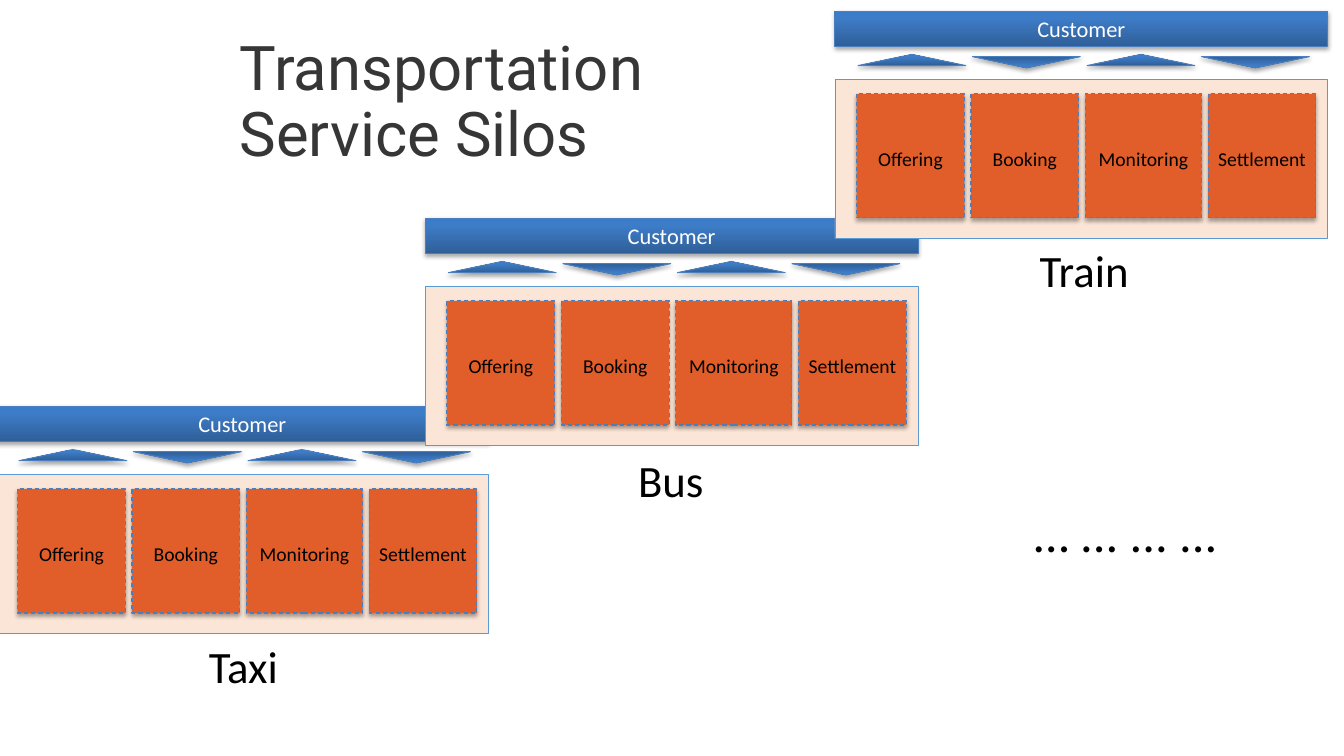
from copy import deepcopy
from dataclasses import dataclass

from lxml import etree
from pptx import Presentation
from pptx import util as u
from pptx.dml.color import RGBColor
from pptx.enum import dml, shapes, text
from pptx.oxml.ns import qn


@dataclass(frozen=True)
class Theme:
    """Colours, fonts and type sizes of the slide."""
    heading: str = "353635"
    ink: str = "000000"
    bar_ink: str = "FFFFFF"
    pane: str = "FBE5D6"
    pane_edge: str = "5B9BD5"
    stage: str = "E15D29"
    edge: str = "4B7EBC"
    gradient: tuple = ((0, "2F5F99"), (0.8, "3D7CC7"), (1, "3A7CCB"))
    heading_font: str = "Roboto"
    body_font: str = "Calibri"
    heading_size: int = 44
    more_size: int = 36
    label_size: int = 32
    bar_size: int = 16
    stage_size: int = 14


class SiloSlide:
    """Draws the elements of the silo diagram on one slide."""

    def __init__(self, slide, theme):
        """Keep the slide and its theme."""
        self.slide = slide
        self.theme = theme

    def add_words(self, frame, lines, size, colour, font, align, anchor):
        """Put lines, parted by line breaks, into a text frame."""
        frame.word_wrap = True
        frame.vertical_anchor = anchor
        paragraph = frame.paragraphs[0]
        paragraph.alignment = align
        for number, line in enumerate(lines):
            if number:
                paragraph.add_line_break()
            run = paragraph.add_run()
            run.text = line
            run.font.size = u.Pt(size)
            run.font.name = font
            run.font.color.rgb = RGBColor.from_string(colour)
        return paragraph

    def heading(self, lines, left, top, width, height):
        """Add the slide heading."""
        box = self.slide.shapes.add_textbox(
            u.Pt(left), u.Pt(top), u.Pt(width), u.Pt(height))
        paragraph = self.add_words(
            box.text_frame, lines, self.theme.heading_size, self.theme.heading,
            self.theme.heading_font, text.PP_ALIGN.LEFT, text.MSO_ANCHOR.MIDDLE)
        paragraph.line_spacing = 0.9

    def label(self, words, left, top, width, height, size):
        """Add a centred caption."""
        box = self.slide.shapes.add_textbox(
            u.Pt(left), u.Pt(top), u.Pt(width), u.Pt(height))
        self.add_words(box.text_frame, [words], size, self.theme.ink,
                       self.theme.body_font, text.PP_ALIGN.CENTER, text.MSO_ANCHOR.TOP)

    def block(self, kind, left, top, width, height, edge, weight, fill=None):
        """Add a preset shape with a plain fill, or the blue gradient."""
        shape = self.slide.shapes.add_shape(
            kind, u.Pt(left), u.Pt(top), u.Pt(width), u.Pt(height))
        shape.shadow.inherit = False
        shape.line.color.rgb = RGBColor.from_string(edge)
        shape.line.width = u.Pt(weight)
        if fill:
            shape.fill.solid()
            shape.fill.fore_color.rgb = RGBColor.from_string(fill)
        else:
            self.shade(shape)
        return shape

    def shade(self, shape):
        """Fill a shape with the three-stop gradient, dark at the bottom."""
        shape.fill.gradient()
        stops = shape.element.spPr.find(qn("a:gradFill")).find(qn("a:gsLst"))
        stops.append(deepcopy(stops[-1]))
        for stop, (position, colour) in zip(shape.fill.gradient_stops, self.theme.gradient):
            stop.position = position
            stop.color.rgb = RGBColor.from_string(colour)
        shape.fill.gradient_angle = 90

    def cast_shadow(self, shape):
        """Give a shape a soft shadow below it."""
        effects = shape.element.spPr.find(qn("a:effectLst"))
        shadow = etree.SubElement(
            effects, qn("a:outerShdw"), blurRad=str(u.Pt(3.1)), dist=str(u.Pt(1.8)),
            dir="5400000", rotWithShape="0")
        colour = etree.SubElement(shadow, qn("a:srgbClr"), val=self.theme.ink)
        etree.SubElement(colour, qn("a:alpha"), val="35000")

    def pane(self, left, top, width, height):
        """Add the pale background of a silo."""
        self.block(shapes.MSO_SHAPE.RECTANGLE, left, top, width, height,
                   self.theme.pane_edge, 0.5, self.theme.pane)

    def bar(self, words, left, top, width, height):
        """Add the gradient customer bar."""
        bar = self.block(shapes.MSO_SHAPE.RECTANGLE, left, top, width, height,
                         self.theme.edge, 0.75)
        self.cast_shadow(bar)
        self.add_words(bar.text_frame, [words], self.theme.bar_size, self.theme.bar_ink,
                       self.theme.body_font, text.PP_ALIGN.CENTER, text.MSO_ANCHOR.MIDDLE)

    def stage(self, words, left, top, width, height):
        """Add one dashed process stage."""
        stage = self.block(shapes.MSO_SHAPE.RECTANGLE, left, top, width, height,
                           self.theme.edge, 0.75, self.theme.stage)
        stage.line.dash_style = dml.MSO_LINE.DASH
        self.cast_shadow(stage)
        frame = stage.text_frame
        frame.margin_left = frame.margin_right = u.Pt(0)
        frame.margin_top = u.Pt(37.8)
        self.add_words(frame, [words], self.theme.stage_size, self.theme.ink,
                       self.theme.body_font, text.PP_ALIGN.CENTER, text.MSO_ANCHOR.TOP)

    def pointer(self, left, top, width, height, down):
        """Add a flat triangle pointing up or down."""
        pointer = self.block(shapes.MSO_SHAPE.ISOSCELES_TRIANGLE, left, top,
                             width, height, self.theme.edge, 0.75)
        self.cast_shadow(pointer)
        if down:
            pointer.element.spPr.find(qn("a:xfrm")).set("flipV", "1")

    def silo(self, left, top):
        """Add a whole silo whose pane starts at the given corner."""
        self.pane(left, top, 352, 113.8)
        self.bar("Customer", left, top - 48.8, 352, 25.2)
        stage_left = left + 15.5
        for index, (words, width) in enumerate(STAGES):
            self.stage(words, stage_left, top + 10.4, width, 88.6)
            stage_left += width + 4.7
            down = index % 2 == 1
            self.pointer(left + 16.5 + index * 81.8, top - (16.2 if down else 17.8),
                         77, 8, down)


STAGES = (("Offering", 77), ("Booking", 77), ("Monitoring", 83), ("Settlement", 77))
SILOS = (
    ("Taxi", (-2.9, 338.9), (118.8, 452.9)),
    ("Bus", (303.8, 204.6), (424.1, 319.7)),
    ("Train", (596.4, 56.7), (719.3, 169.9)),
)


def main():
    """Build and save the slide."""
    deck = Presentation()
    deck.slide_width, deck.slide_height = u.Pt(960), u.Pt(540)
    theme = Theme()
    page = SiloSlide(deck.slides.add_slide(deck.slide_layouts[6]), theme)
    page.heading(("Transportation", "Service Silos"), 164.2, 21.6, 729.4, 104.4)
    for _, corner, _ in SILOS:
        page.silo(*corner)
    for service, _, place in SILOS:
        page.label(service, *place, 110.2, 46, theme.label_size)
    page.label("… ... ... ...", 689, 355, 230.4, 51, theme.more_size)
    deck.save("out.pptx")


if __name__ == "__main__":
    main()
